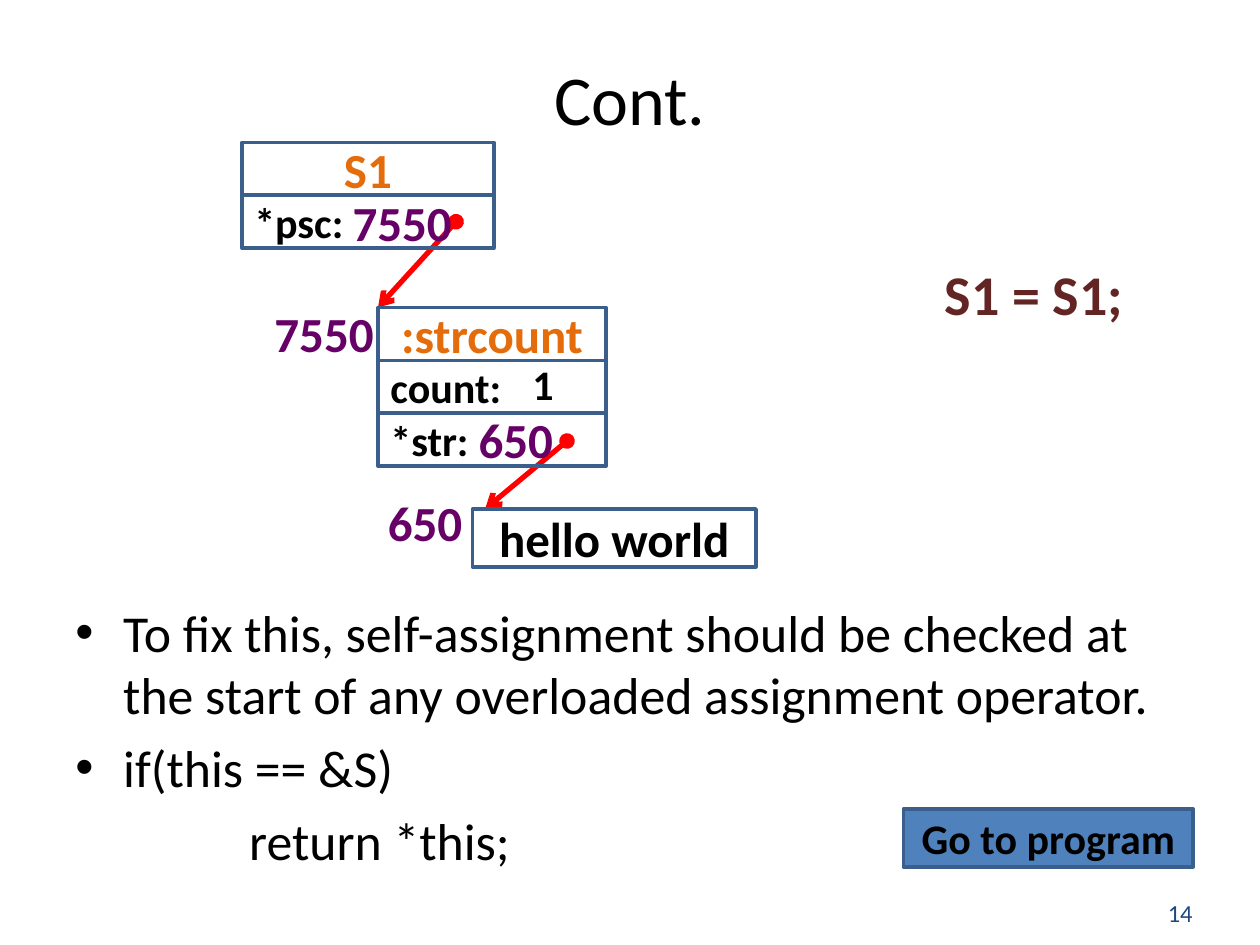
import pptx
import pptx.util
import pptx.dml.color
import pptx.enum.shapes
import pptx.enum.text
import lxml.etree
import pptx.oxml.ns

Inches, Pt = pptx.util.Inches, pptx.util.Pt
RGB = pptx.dml.color.RGBColor.from_string
ALIGN = pptx.enum.text.PP_ALIGN
ANCHOR = pptx.enum.text.MSO_ANCHOR
qn = pptx.oxml.ns.qn

THEME = {
    "font": "Calibri",
    "ink": "000000", "name": "E46C0A", "address": "660066", "code": "632523",
    "page": "1F497D", "edge": "3A5F8C", "button": "4F81BD",
    "paper": "FFFFFF", "arrow": "FF0000",
    "title": 40, "body": 29.6, "big": 32, "mid": 28, "small": 24, "note": 14,
    "edge_pt": 2, "arrow_pt": 3, "gap": 6,
}

ROW = 0.42
TEXT = 0.46

# Tables of memory cells: left, top, width, then rows of
# (text, colour, size, centred), stacked downwards.
STACKS = [
    (1.92, 1.13, 2, ROW, [("S1", "name", "mid", True),
                          ("*psc:", "ink", "small", False)]),
    (3, 2.44, 1.81, ROW, [(":strcount", "name", "mid", True),
                          ("count:", "ink", "small", False),
                          ("*str:", "ink", "small", False)]),
    (3.75, 4.04, 2.25, TEXT, [("hello world", "ink", "mid", True)]),
]

# Text, place, colour, size, bold, centred
LABELS = [
    ("Cont.", (0.5, 0.38, 9, 0.78), "ink", "title", False, True),
    ("7550", (2.7, 1.53, 1.21, TEXT), "address", "mid", True, False),
    ("7550", (2.08, 2.41, 1.21, TEXT), "address", "mid", True, False),
    ("650", (3.7, 3.25, 0.87, TEXT), "address", "mid", True, False),
    ("650", (2.98, 3.91, 0.87, TEXT), "address", "mid", True, False),
    ("S1 = S1;", (7.4, 2.1, 1.84, TEXT), "code", "big", True, False),
    ("14", (9.17, 7.08, 0.67, 0.33), "page", "note", False, False),
]

POINTERS = [((3.62, 1.76), (3, 2.44)), ((4.5, 3.5), (3.85, 4.04))]

# Text, left margin, bulleted
BODY = [
    ("To fix this, self-assignment should be checked at the start of any "
     "overloaded assignment operator.", 0.38, True),
    ("if(this == &S)", 0.38, True),
    ("return *this;", 1.38, False),
]


def write(par, text, ink, size, bold=False):
    run = par.add_run()
    run.text = text
    font = run.font
    font.name, font.size, font.bold = THEME["font"], Pt(THEME[size]), bold
    font.color.rgb = RGB(THEME[ink])


def fill_text(shape, text, ink, size, bold, centred):
    frame = shape.text_frame
    frame.word_wrap = True
    frame.vertical_anchor = ANCHOR.MIDDLE
    par = frame.paragraphs[0]
    par.alignment = ALIGN.CENTER if centred else ALIGN.LEFT
    write(par, text, ink, size, bold)


def add_box(slide, place, text, ink, size, centred, fill=None, edge=True):
    box = slide.shapes.add_shape(pptx.enum.shapes.MSO_SHAPE.RECTANGLE,
                                 *map(Inches, place))
    box.shadow.inherit = False
    if fill:
        box.fill.solid()
        box.fill.fore_color.rgb = RGB(THEME[fill])
    else:
        box.fill.background()
    if edge:
        box.line.color.rgb = RGB(THEME["edge"])
        box.line.width = Pt(THEME["edge_pt"])
    else:
        box.line.fill.background()
    fill_text(box, text, ink, size, True, centred)


def add_label(slide, text, place, *style):
    box = slide.shapes.add_textbox(*map(Inches, place))
    fill_text(box, text, *style)


def add_pointer(slide, start, end):
    """Draw a line with a dot at its start and an arrow at its end."""
    link = slide.shapes.add_connector(
        pptx.enum.shapes.MSO_CONNECTOR.STRAIGHT, *map(Inches, start + end))
    link.line.color.rgb = RGB(THEME["arrow"])
    link.line.width = Pt(THEME["arrow_pt"])
    line = link.line._get_or_add_ln()
    for tag, kind in (("a:headEnd", "oval"), ("a:tailEnd", "arrow")):
        lxml.etree.SubElement(line, qn(tag), type=kind)
    lxml.etree.SubElement(link._element.spPr, qn("a:effectLst"))


def add_body(slide):
    box = slide.shapes.add_textbox(*map(Inches, (0.5, 4.72, 9, 2.53)))
    frame = box.text_frame
    frame.word_wrap = True
    for i, (text, left, dotted) in enumerate(BODY):
        par = frame.add_paragraph() if i else frame.paragraphs[0]
        if i:
            par.space_before = Pt(THEME["gap"])
        props = par._p.get_or_add_pPr()
        props.set("marL", str(Inches(left)))
        props.set("indent", str(-Inches(left) if dotted else 0))
        if dotted:
            lxml.etree.SubElement(props, qn("a:buFont"), typeface="Arial")
            lxml.etree.SubElement(props, qn("a:buChar"), char="•")
        else:
            lxml.etree.SubElement(props, qn("a:buNone"))
        write(par, text, "ink", "body")


def main():
    deck = pptx.Presentation()
    deck.slide_width, deck.slide_height = Inches(10), Inches(7.5)
    slide = deck.slides.add_slide(deck.slide_layouts[6])

    add_body(slide)
    add_box(slide, (7.17, 6.42, 2.3, TEXT), "Go to program",
            "ink", "small", True, fill="button")
    for start, end in POINTERS:
        add_pointer(slide, start, end)
    for left, top, width, height, rows in STACKS:
        for i, row in enumerate(rows):
            add_box(slide, (left, top + i * height, width, height), *row)
    add_box(slide, (4.06, 2.93, 0.5, 0.23), "1", "ink", "small", True,
            fill="paper", edge=False)
    for label in LABELS:
        add_label(slide, *label)
    deck.save("out.pptx")


if __name__ == "__main__":
    main()
